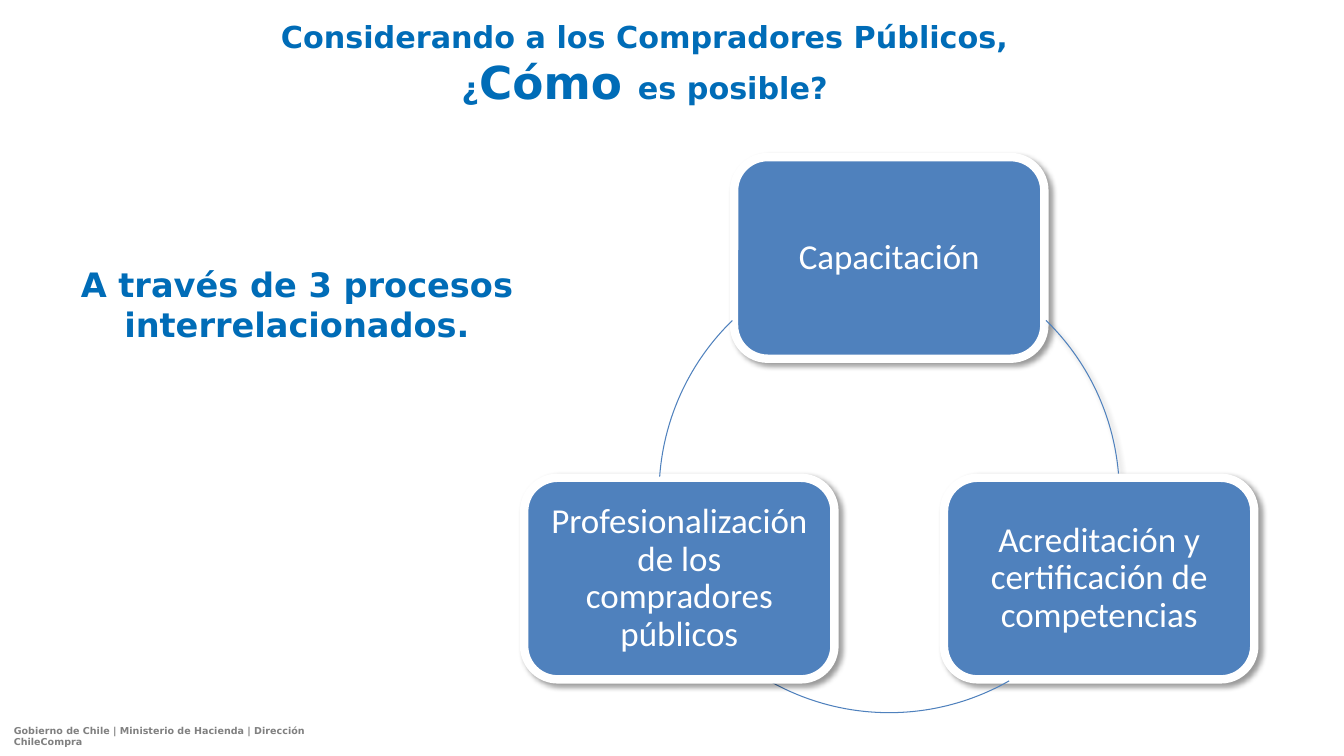
from lxml import etree
from pptx import Presentation
from pptx import util as u
from pptx.dml.color import RGBColor
from pptx.enum import shapes, text
from pptx.oxml import parse_xml
from pptx.oxml.ns import nsdecls, qn

BLUE = RGBColor(0x00, 0x6C, 0xB7)
STEEL = RGBColor(0x4F, 0x81, 0xBD)
GREY = RGBColor(0x80, 0x80, 0x80)
WHITE = RGBColor(0xFF, 0xFF, 0xFF)
HEADING_FONT = "DejaVu Sans"
CARD_FONT = "Calibri"
CARD_W, CARD_H = 7.82, 5.08
RADIUS = 6.1


def cm(*lengths):
    return [u.Cm(length) for length in lengths]


def style(run, size, color, name=HEADING_FONT, bold=True):
    run.font.size = u.Pt(size)
    run.font.name = name
    run.font.bold = bold
    run.font.color.rgb = color


def add_shadow(shape):
    effects = shape._element.spPr.find(qn("a:effectLst"))
    effects.append(parse_xml(
        f'<a:outerShdw {nsdecls("a")} blurRad="50800" dist="38100" dir="2700000" '
        'algn="tl" rotWithShape="0"><a:srgbClr val="000000">'
        '<a:alpha val="40000"/></a:srgbClr></a:outerShdw>'))


def fill_title(slide, box):
    title = slide.shapes.title
    title.left, title.top, title.width, title.height = cm(*box)
    frame = title.text_frame
    frame.auto_size = text.MSO_AUTO_SIZE.NONE
    frame.vertical_anchor = text.MSO_ANCHOR.TOP
    question = frame.paragraphs[0]
    question.text = "Considerando a los Compradores Públicos, \v¿"
    question.alignment = text.PP_ALIGN.CENTER
    for words, size in (("Cómo ", 32.4), ("es posible? ", 21.6)):
        run = question.add_run()
        run.text = words
        style(run, size, BLUE)
    for run in question.runs[:2]:
        style(run, 21.6, BLUE)


def add_label(slide, box, words, size, color, alignment, wrap):
    frame = slide.shapes.add_textbox(*cm(*box)).text_frame
    frame.word_wrap = wrap
    frame.text = words
    frame.paragraphs[0].alignment = alignment
    style(frame.paragraphs[0].runs[0], size, color)


def add_card(slide, left, top, process):
    card = slide.shapes.add_shape(
        shapes.MSO_SHAPE.ROUNDED_RECTANGLE, *cm(left, top, CARD_W, CARD_H))
    card.shadow.inherit = False
    add_shadow(card)
    card.fill.solid()
    card.fill.fore_color.rgb = STEEL
    card.line.color.rgb = WHITE
    card.line.width = u.Pt(6)
    frame = card.text_frame
    frame.word_wrap = True
    frame.vertical_anchor = text.MSO_ANCHOR.MIDDLE
    frame.margin_left = frame.margin_right = u.Cm(0.25)
    frame.margin_top = frame.margin_bottom = u.Cm(0.25)
    frame.text = process
    paragraph = frame.paragraphs[0]
    paragraph.alignment = text.PP_ALIGN.CENTER
    paragraph.line_spacing = 0.9
    style(paragraph.runs[0], 25, WHITE, CARD_FONT, False)


def add_arc(slide, center_x, center_y, start, end, shadowed):
    arc = slide.shapes.add_shape(
        shapes.MSO_SHAPE.ARC,
        *cm(center_x - RADIUS, center_y - RADIUS, 2 * RADIUS, 2 * RADIUS))
    arc.adjustments[0] = start * 0.6
    arc.adjustments[1] = end * 0.6
    arc.shadow.inherit = False
    if shadowed:
        add_shadow(arc)
    arc.fill.background()
    arc.line.color.rgb = STEEL
    arc.line.width = u.Pt(0.75)


def add_process_cycle(slide, box):
    left, top, width, height = box
    middle_x, middle_y = left + width / 2, top + height / 2
    right_card, lower_card = left + width - CARD_W, top + height - CARD_H
    steps = (
        ("Capacitación", middle_x - CARD_W / 2, top,
         0.3, 1.91, 314.2, 355.9, True),
        ("Acreditación y certificación de competencias", right_card, lower_card,
         0, 1.32, 60.3, 119.7, False),
        ("Profesionalización de los compradores públicos", left, lower_card,
         -0.3, 1.91, 184.1, 225.8, False),
    )
    for process, card_x, card_y, shift_x, shift_y, start, end, shadowed in steps:
        add_card(slide, card_x, card_y, process)
        add_arc(slide, middle_x - shift_x, middle_y + shift_y, start, end, shadowed)


def main():
    deck = Presentation()
    deck.slide_width, deck.slide_height = cm(33.87, 19.05)
    slide = deck.slides.add_slide(deck.slide_layouts[5])
    add_label(slide, (0.1, 18.14, 9.58, 0.53),
              "Gobierno de Chile | Ministerio de Hacienda | Dirección ChileCompra",
              6.8, GREY, text.PP_ALIGN.LEFT, False)
    fill_title(slide, (1.7, 0.33, 29.36, 3.4))
    add_process_cycle(slide, (13.21, 3.96, 18.4, 13.16))
    add_label(slide, (0.08, 6.53, 14.81, 2.31),
              "A través de 3 procesos interrelacionados.",
              24, BLUE, text.PP_ALIGN.CENTER, True)
    deck.save("out.pptx")


if __name__ == "__main__":
    main()
